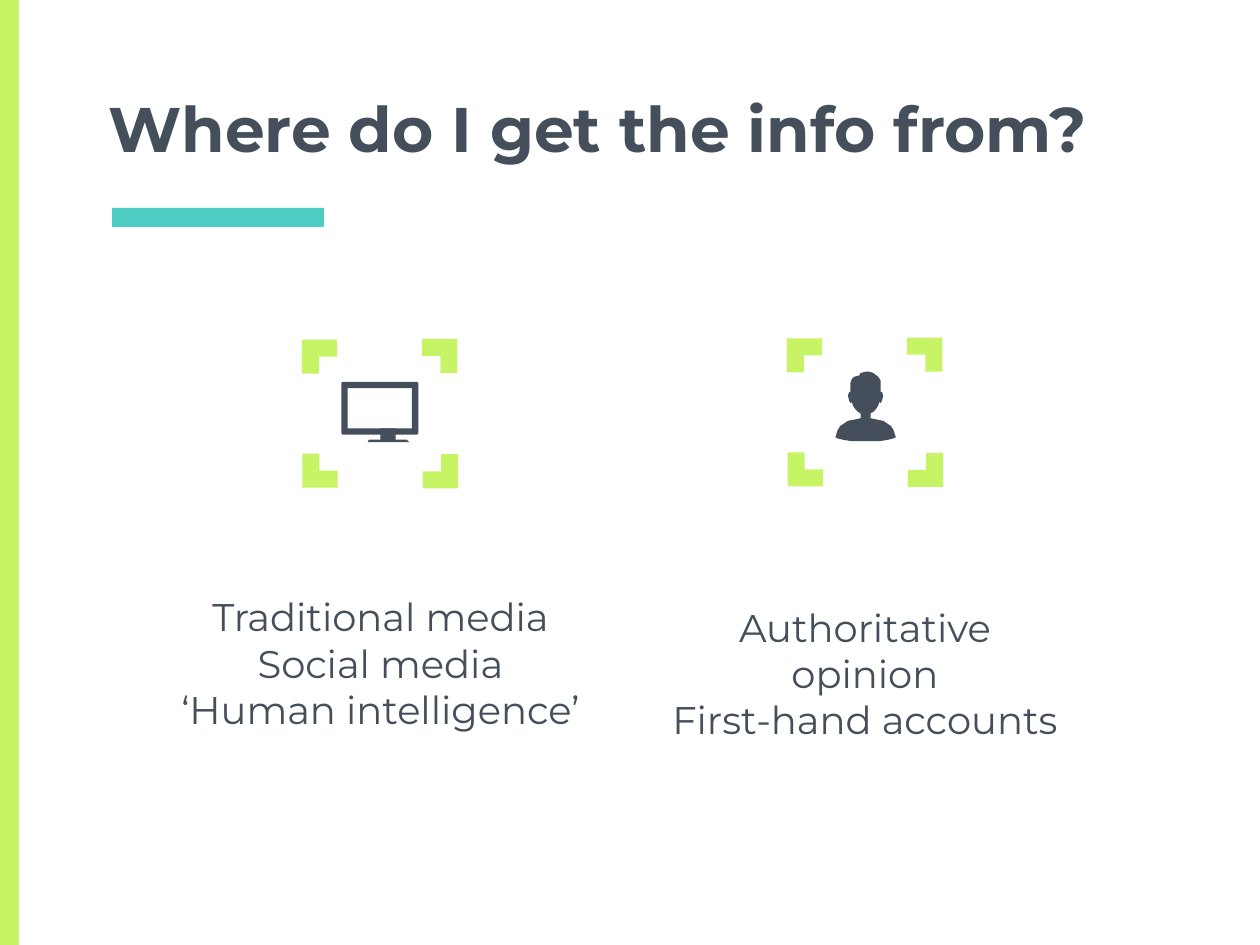
from pptx import Presentation
from pptx.dml.color import RGBColor
from pptx.enum.shapes import MSO_SHAPE
from pptx.enum.text import MSO_ANCHOR, PP_ALIGN
from pptx.util import Pt

PX = 9144
RECTANGLE = MSO_SHAPE.RECTANGLE
CORNER = MSO_SHAPE.CORNER
LEFT, CENTER = PP_ALIGN.LEFT, PP_ALIGN.CENTER
TOP, BOTTOM = MSO_ANCHOR.TOP, MSO_ANCHOR.BOTTOM

LIME, TEAL, SLATE = "C7F464", "4ECDC4", "454F5B"
FONT = "Montserrat"

BRACKETS = [
    (0, 91, 28, 27, 0),
    (96, 91, 27, 28, 270),
    (0, 0, 27, 28, 90),
    (95, 0, 28, 27, 180),
]

HEAD_TOP = [
    (675, 311), (675, 304), (676, 301), (678, 299), (682, 298), (683, 296),
    (687, 295), (690, 295), (693, 296), (697, 299), (699, 302), (699, 311),
]
RIGHT_SIDE = [
    (700, 311), (701, 314), (700, 318), (699, 320), (698, 319), (697, 322),
    (695, 325), (693, 327), (691, 328), (691, 332), (696, 333), (701, 334),
    (704, 336), (707, 338), (709, 341), (710, 344), (711, 347), (709, 348),
    (705, 349), (699, 350), (687, 350),
]
PERSON_AXIS = 687
LEFT_SIDE = [(2 * PERSON_AXIS - x, y) for x, y in reversed(RIGHT_SIDE)]

STAND = [
    (302, 340), (302, 349), (294, 349), (293, 349), (292, 350), (292, 351),
    (325, 351), (324, 350), (323, 349), (314, 349), (314, 340),
]
SCREEN = [(327, 308), (327, 340), (276, 340), (276, 308)]
CASING = [
    (272, 303), (271, 304), (271, 344), (272, 345),
    (331, 345), (332, 344), (332, 304), (331, 303),
]


def color(value):
    return RGBColor.from_string(value)


class SlideBuilder:
    def __init__(self, slide, font, text_color):
        self.slide = slide
        self.font = font
        self.text_color = text_color

    def paint(self, shape, fill):
        shape.shadow.inherit = False
        shape.fill.solid()
        shape.fill.fore_color.rgb = color(fill)
        shape.line.fill.background()

    def shape(self, kind, left, top, width, height, fill, shapes=None):
        shapes = shapes or self.slide.shapes
        shape = shapes.add_shape(
            kind, left * PX, top * PX, width * PX, height * PX)
        self.paint(shape, fill)
        return shape

    def group(self):
        return self.slide.shapes.add_group_shape()

    def frame(self, left, top):
        group = self.group()
        for x, y, width, height, rotation in BRACKETS:
            bracket = self.shape(
                CORNER, left + x, top + y, width, height, LIME, group.shapes)
            bracket.rotation = rotation

    def outline(self, contours, fill, group=None):
        shapes = (group or self.slide).shapes
        first, *others = contours
        builder = shapes.build_freeform(*first[0], scale=PX)
        builder.add_line_segments(first[1:], close=True)
        for contour in others:
            builder.move_to(*contour[0])
            builder.add_line_segments(contour[1:], close=True)
        self.paint(builder.convert_to_shape(), fill)

    def text(self, content, left, top, width, height, size,
             align=LEFT, anchor=TOP, bold=False, top_inset=10):
        box = self.slide.shapes.add_textbox(
            left * PX, top * PX, width * PX, height * PX)
        text_frame = box.text_frame
        text_frame.word_wrap = True
        text_frame.vertical_anchor = anchor
        text_frame.margin_left = text_frame.margin_right = 10 * PX
        text_frame.margin_top = top_inset * PX
        text_frame.margin_bottom = 10 * PX
        text_frame.text = content
        for paragraph in text_frame.paragraphs:
            paragraph.alignment = align
            for run in paragraph.runs:
                run.font.name = self.font
                run.font.size = Pt(size)
                run.font.bold = bold
                run.font.color.rgb = color(self.text_color)


def main():
    presentation = Presentation()
    presentation.slide_width = 1000 * PX
    presentation.slide_height = 750 * PX
    slide = presentation.slides.add_slide(presentation.slide_layouts[6])
    builder = SlideBuilder(slide, FONT, SLATE)

    builder.shape(RECTANGLE, 89, 165, 168, 15, TEAL)
    builder.shape(RECTANGLE, 0, 0, 15, 750, LIME)
    builder.text("Where do I get the info from?", 76, 69, 849, 72, 36,
                 anchor=BOTTOM, bold=True)

    builder.text("Traditional media\nSocial media\n‘Human intelligence’",
                 124, 387, 356, 327, 22, align=CENTER, top_inset=84)
    builder.text("Authoritative opinion\nFirst-hand accounts",
                 520, 395, 333, 317, 22, align=CENTER, top_inset=84)

    builder.frame(240, 269)
    builder.frame(625, 268)

    builder.outline([HEAD_TOP + RIGHT_SIDE + LEFT_SIDE[1:]], SLATE)
    monitor = builder.group()
    builder.outline([STAND], SLATE, monitor)
    builder.outline([SCREEN, CASING], SLATE, monitor)

    presentation.save("out.pptx")


if __name__ == "__main__":
    main()
